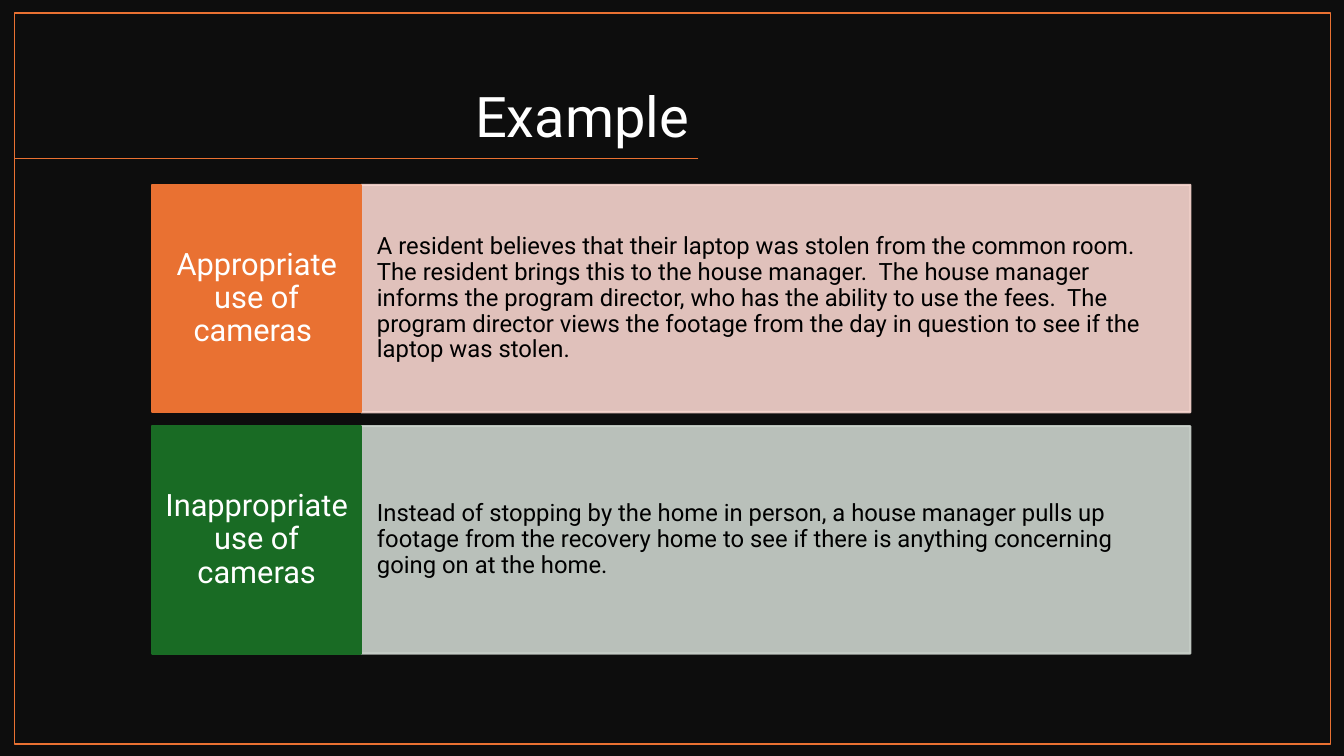
"""Build the slide with one right and one wrong use of cameras."""
from dataclasses import dataclass

from lxml import etree
from pptx import Presentation
from pptx.dml.color import RGBColor
from pptx.enum.shapes import MSO_CONNECTOR, MSO_SHAPE
from pptx.enum.text import MSO_ANCHOR, PP_ALIGN
from pptx.oxml.ns import qn
from pptx.util import Cm, Pt

RECT = MSO_SHAPE.RECTANGLE
LINE = MSO_CONNECTOR.STRAIGHT
MIDDLE, BOTTOM = MSO_ANCHOR.MIDDLE, MSO_ANCHOR.BOTTOM
LEFT, CENTER, RIGHT = PP_ALIGN.LEFT, PP_ALIGN.CENTER, PP_ALIGN.RIGHT


@dataclass(frozen=True)
class Theme:
    """Hold the font, colours and type sizes."""
    font: str = "Roboto"
    night: str = "0D0D0D"
    white: str = "FFFFFF"
    black: str = "000000"
    orange: str = "E97132"
    green: str = "196B24"
    rose: str = "F7D5CE"
    sage: str = "CCD4CD"
    title: int = 40
    label: int = 22
    body: int = 17


theme = Theme()


def add_box(x, y, w, h, fill=None, edge=None, width=1.5, alpha=None):
    """Add a plain rectangle, with sizes in centimetres."""
    box = slide.shapes.add_shape(RECT, Cm(x), Cm(y), Cm(w), Cm(h))
    box.shadow.inherit = False
    if fill:
        box.fill.solid()
        box.fill.fore_color.rgb = RGBColor.from_string(fill)
    else:
        box.fill.background()
    if edge:
        box.line.color.rgb = RGBColor.from_string(edge)
        box.line.width = Pt(width)
    else:
        box.line.fill.background()
    if alpha:
        for tint in box._element.spPr.iter(qn("a:srgbClr")):
            etree.SubElement(tint, qn("a:alpha"), val=str(alpha * 1000))
    return box


def set_text(box, text, size, color, align, anchor, side, edge):
    """Fill a shape with one styled paragraph."""
    frame = box.text_frame
    frame.text = text
    frame.word_wrap = True
    frame.vertical_anchor = anchor
    frame.margin_left = frame.margin_right = Cm(side)
    frame.margin_top = frame.margin_bottom = Cm(edge)
    para = frame.paragraphs[0]
    para.alignment = align
    para.line_spacing = 0.9
    font = para.runs[0].font
    font.name = theme.font
    font.size = Pt(size)
    font.color.rgb = RGBColor.from_string(color)


deck = Presentation()
deck.slide_width, deck.slide_height = Cm(33.87), Cm(19.05)
slide = deck.slides.add_slide(deck.slide_layouts[6])

add_box(0, 0, 33.87, 19.05, theme.night)

title = slide.shapes.add_textbox(Cm(2.34), Cm(1.07), Cm(15.27), Cm(2.84))
set_text(title, "Example", theme.title, theme.white, RIGHT, BOTTOM, 0.25, 0.13)

rule = slide.shapes.add_connector(LINE, Cm(17.6), Cm(4), Cm(0.36), Cm(4))
rule.line.color.rgb = RGBColor.from_string(theme.orange)
rule.line.width = Pt(1)
etree.SubElement(rule._element.spPr, qn("a:effectLst"))

add_box(0.36, 0.33, 33.17, 18.42, edge=theme.orange, width=1)

cases = [
    ("Appropriate use of cameras ", theme.orange, theme.rose,
     "A resident believes that their laptop was stolen from the common room.  "
     "The resident brings this to the house manager.  The house manager "
     "informs the program director, who has the ability to use the fees.  The "
     "program director views the footage from the day in question to see if "
     "the laptop was stolen."),
    ("Inappropriate use of cameras", theme.green, theme.sage,
     "Instead of stopping by the home in person, a house manager pulls up "
     "footage from the recovery home to see if there is anything concerning "
     "going on at the home."),
]
start, name_w, body_w = 3.84, 5.26, 20.9
top, high, gap = 4.66, 5.73, 0.35
for row, (name, dark, pale, story) in enumerate(cases):
    y = top + row * (high + gap)
    body = add_box(start + name_w, y, body_w, high, pale, pale, alpha=90)
    set_text(body, story, theme.body, theme.black, LEFT, MIDDLE, 0.4, 1.45)
    label = add_box(start, y, name_w, high, dark, dark)
    set_text(label, name, theme.label, theme.white, CENTER, MIDDLE, 0.28, 0.56)

deck.save("out.pptx")
